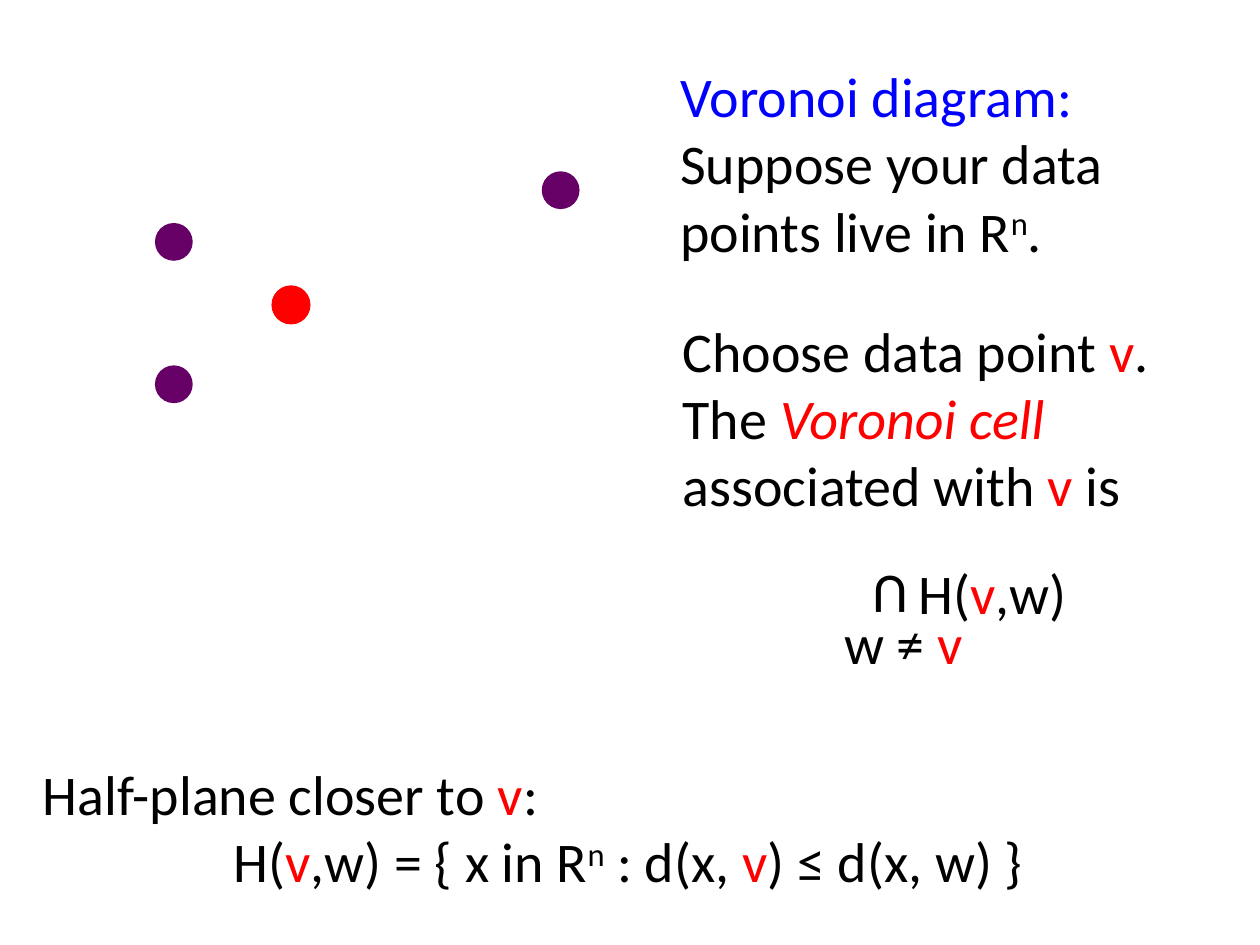
import pptx
import pptx.dml.color
import pptx.enum.shapes
import pptx.enum.text
import pptx.util
from pptx.util import Inches

COLORS = {
    "text": "000000",
    "heading": "0000FF",
    "chosen": "FF0000",
    "site": "660066",
}
FONT = "Calibri"
FONT_SIZE = 32
DOT_SIZE = 0.3
V = ("v", "chosen")


def rgb(name):
    return pptx.dml.color.RGBColor.from_string(COLORS[name])


def add_run(paragraph, text, color="text", style=None):
    run = paragraph.add_run()
    run.text = text
    run.font.name = FONT
    run.font.size = pptx.util.Pt(FONT_SIZE)
    run.font.color.rgb = rgb(color)
    if style == "italic":
        run.font.italic = True
    elif style == "superscript":
        run._r.get_or_add_rPr().set("baseline", "30000")


def add_text(slide, left, top, width, height, paragraphs):
    """Add a text box; each paragraph is a list of (text, color, style) runs."""
    box = slide.shapes.add_textbox(
        Inches(left), Inches(top), Inches(width), Inches(height))
    frame = box.text_frame
    frame.word_wrap = True
    for index, runs in enumerate(paragraphs):
        paragraph = frame.paragraphs[0] if index == 0 else frame.add_paragraph()
        for run in runs:
            add_run(paragraph, *run)
    return box


def add_data_points(slide, left, top):
    points = [
        (0, 1.54, "site"),
        (0.93, 0.91, "chosen"),
        (0, 0.41, "site"),
        (3.07, 0, "site"),
    ]
    for x, y, color in points:
        dot = slide.shapes.add_shape(
            pptx.enum.shapes.MSO_SHAPE.OVAL, Inches(left + x), Inches(top + y),
            Inches(DOT_SIZE), Inches(DOT_SIZE))
        dot.shadow.inherit = False
        dot.fill.solid()
        dot.fill.fore_color.rgb = rgb(color)
        if color == "chosen":
            dot.line.color.rgb = rgb(color)
            dot.line.width = pptx.util.Pt(0.75)
        else:
            dot.line.fill.background()


def add_introduction(slide, left, top):
    add_text(slide, left, top, 4.19, 1.72, [
        [("Voronoi diagram:", "heading")],
        [("Suppose your data points live in R",),
         ("n", "text", "superscript"), (".",)],
    ])


def add_cell_definition(slide, left, top):
    add_text(slide, left, top, 4.4, 1.72, [
        [("Choose data point ",), V, (".",)],
        [("The ",), ("Voronoi cell", "chosen", "italic")],
        [("associated with ",), V, (" is",)],
    ])


def add_intersection(slide, left, top):
    """Write the intersection of half-planes, with a turned U as its sign."""
    add_text(slide, left + 0.59, top, 1.5, 0.64, [[("H(",), V, (",w)",)]])
    sign = add_text(slide, left + 0.33, top + 0.05, 0.38, 0.64, [[("U",)]])
    sign.rotation = 180
    add_text(slide, left, top + 0.4, 1.22, 0.64, [[("w ≠ ",), V]])


def add_half_plane(slide, left, top):
    box = add_text(slide, left, top, 9.59, 1.18, [
        [("Half-plane closer to ",), V, (":",)],
        [("H(",), V, (",w) = { x in R",), ("n", "text", "superscript"),
         (" : d(x, ",), V, (") ≤ d(x, w) } ",)],
    ])
    box.text_frame.paragraphs[1].alignment = pptx.enum.text.PP_ALIGN.CENTER


def main():
    presentation = pptx.Presentation()
    presentation.slide_width = Inches(10)
    presentation.slide_height = Inches(7.5)
    slide = presentation.slides.add_slide(presentation.slide_layouts[6])
    add_data_points(slide, 1.23, 1.36)
    add_introduction(slide, 5.3, 0.44)
    add_cell_definition(slide, 5.32, 2.46)
    add_intersection(slide, 6.6, 4.38)
    add_half_plane(slide, 0.24, 5.98)
    presentation.save("out.pptx")


if __name__ == "__main__":
    main()
